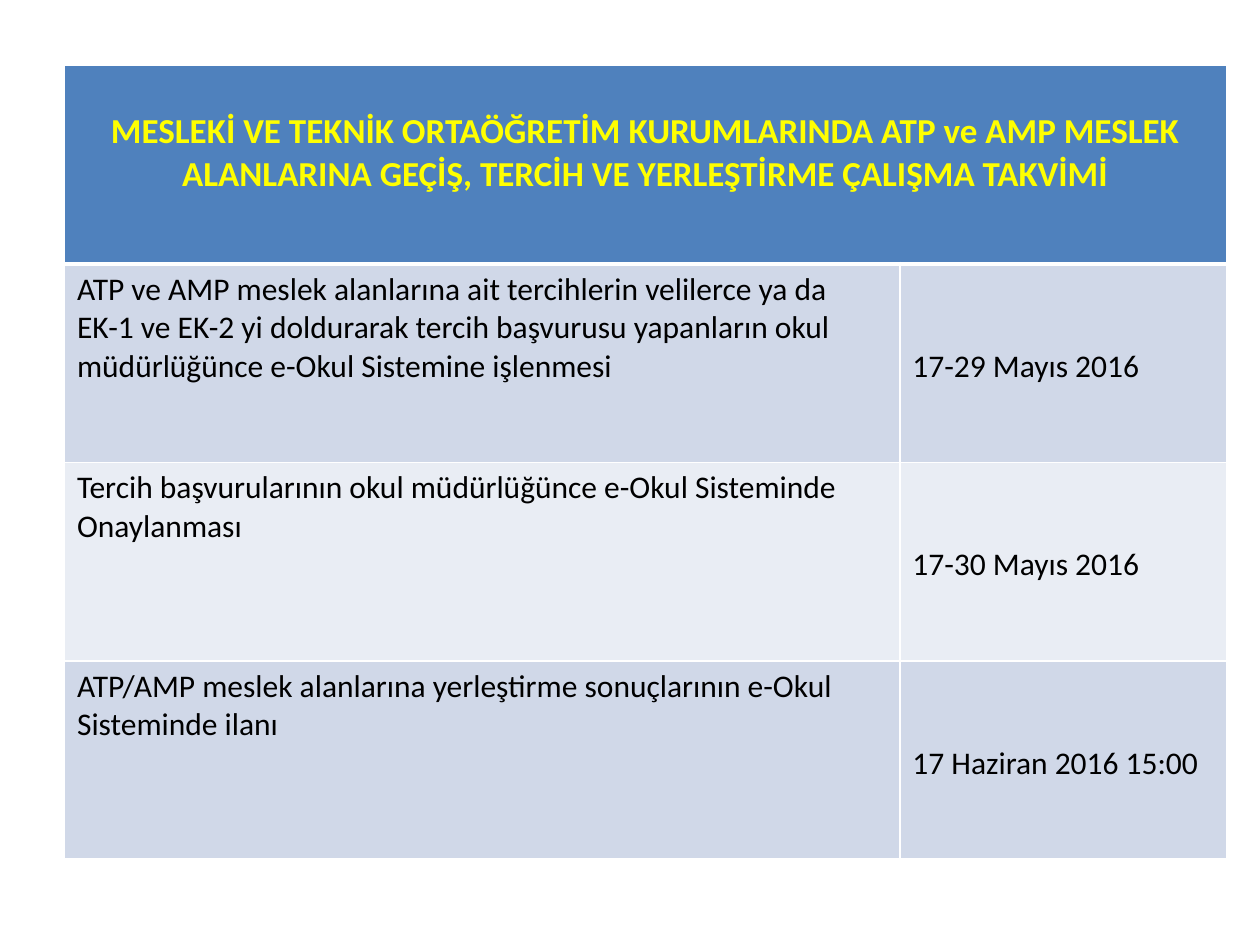
from lxml import etree
from pptx import Presentation
from pptx.dml.color import RGBColor
from pptx.enum.text import MSO_ANCHOR as Anchor, PP_ALIGN as Align
from pptx.oxml.ns import qn
from pptx.util import Cm, Pt

WHITE = RGBColor(0xFF, 0xFF, 0xFF)
BLACK = RGBColor(0x00, 0x00, 0x00)
YELLOW = RGBColor(0xFF, 0xFF, 0x00)
HEADER_BLUE = RGBColor(0x4F, 0x81, 0xBD)
BANDS = (RGBColor(0xD0, 0xD8, 0xE8), RGBColor(0xE9, 0xED, 0xF4))

HEADING = ("MESLEKİ VE TEKNİK ORTAÖĞRETİM KURUMLARINDA ATP ve AMP MESLEK "
           "ALANLARINA GEÇİŞ, TERCİH VE YERLEŞTİRME ÇALIŞMA TAKVİMİ")
SCHEDULE = [
    ("ATP ve AMP meslek alanlarına ait tercihlerin velilerce ya da EK-1 ve "
     "EK-2 yi doldurarak tercih başvurusu yapanların okul müdürlüğünce "
     "e-Okul Sistemine işlenmesi", "17-29 Mayıs 2016"),
    ("Tercih başvurularının okul müdürlüğünce e-Okul Sisteminde Onaylanması",
     "17-30 Mayıs 2016"),
    ("ATP/AMP meslek alanlarına yerleştirme sonuçlarının e-Okul Sisteminde "
     "ilanı", "17 Haziran 2016 15:00"),
]


class SlideBuilder:
    heading_font = {"name": "Calibri", "size": Pt(20), "bold": True}
    body_font = {"name": "Calibri", "size": Pt(18), "bold": False}
    column_widths = (Cm(16.84), Cm(6.58))
    row_height = Cm(4)

    def __init__(self, page):
        self.page = page

    def table(self, left, top, row_count):
        frame = self.page.shapes.add_table(
            row_count, len(self.column_widths), left, top,
            sum(self.column_widths), self.row_height * row_count)
        table = frame.table
        for column, width in zip(table.columns, self.column_widths):
            column.width = width
        for row in table.rows:
            row.height = self.row_height
        return table

    def borders(self, cell, **widths):
        properties = cell._tc.get_or_add_tcPr()
        for side in "LRTB":
            width = Pt(widths.get(side, 1))
            line = etree.SubElement(properties, qn(f"a:ln{side}"), w=str(width))
            fill = etree.SubElement(line, qn("a:solidFill"))
            etree.SubElement(fill, qn("a:srgbClr"), val=str(WHITE))

    def cell(self, cell, text, fill, color, font, align=Align.LEFT,
             margin_top=Cm(0.13)):
        cell.fill.solid()
        cell.fill.fore_color.rgb = fill
        cell.vertical_anchor = Anchor.TOP
        cell.margin_top = margin_top
        para = cell.text_frame.paragraphs[0]
        para.alignment = align
        span = para.add_run()
        span.text = text
        for name, value in font.items():
            setattr(span.font, name, value)
        span.font.color.rgb = color


def main():
    deck = Presentation()
    deck.slide_width, deck.slide_height = Cm(25.4), Cm(19.05)
    builder = SlideBuilder(deck.slides.add_slide(deck.slide_layouts[6]))
    table = builder.table(Cm(1.3), Cm(1.32), len(SCHEDULE) + 1)

    # Heading across both columns
    heading = table.cell(0, 0)
    heading.merge(table.cell(0, 1))
    for column in range(2):
        builder.borders(table.cell(0, column), B=3)
    builder.cell(heading, HEADING, HEADER_BLUE, YELLOW, builder.heading_font,
                 Align.CENTER, Cm(0.9))

    # Tasks, with dates set lower in their cells
    for row, entry in enumerate(SCHEDULE, start=1):
        for column, text in enumerate(entry):
            cell = table.cell(row, column)
            builder.borders(cell, T=3 if row == 1 else 1)
            builder.cell(cell, text, BANDS[(row - 1) % 2], BLACK,
                         builder.body_font,
                         margin_top=Cm((0.13, 1.68)[column]))

    deck.save("out.pptx")


if __name__ == "__main__":
    main()
